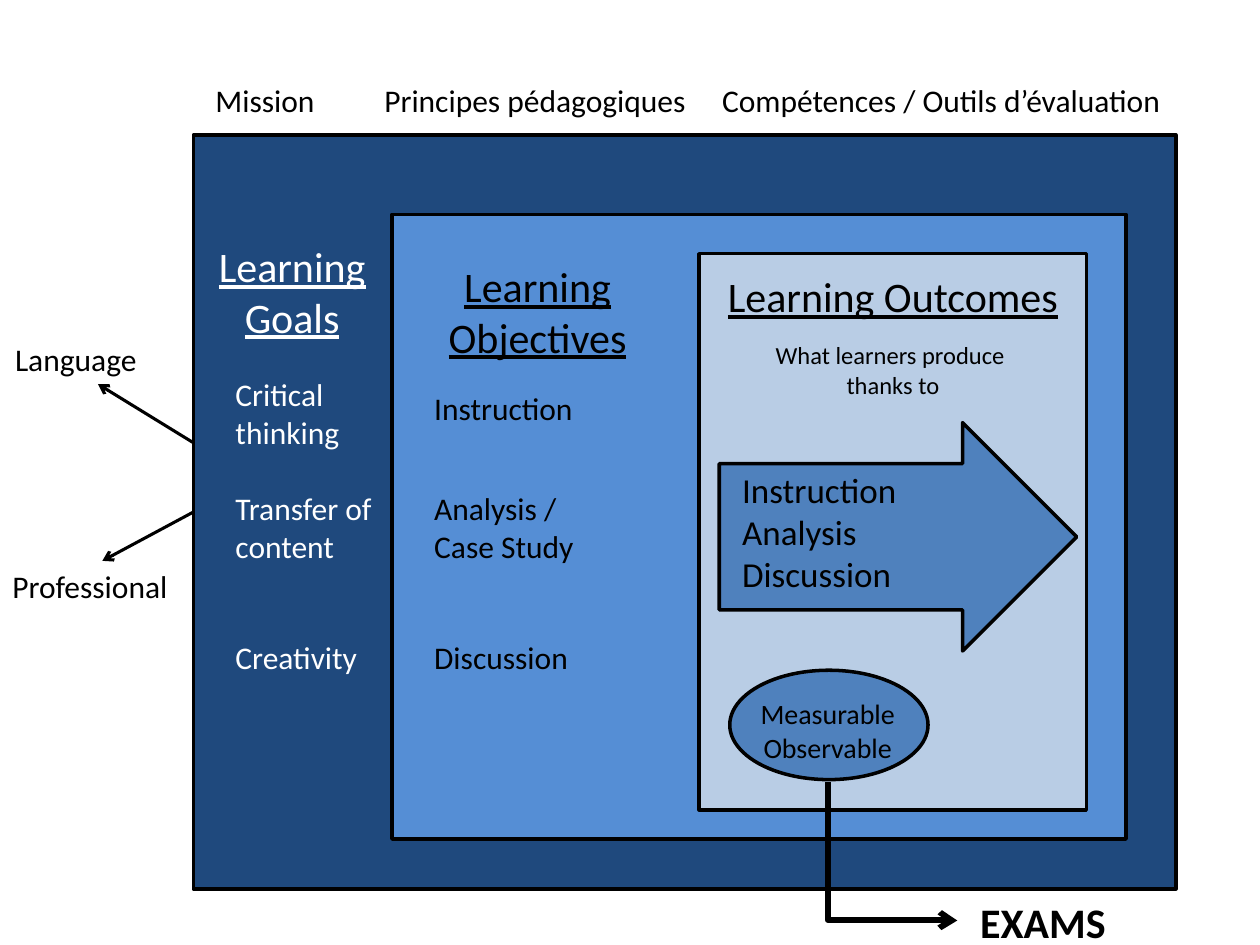
from lxml.etree import SubElement
from pptx import Presentation
from pptx.dml.color import RGBColor
from pptx.enum.shapes import MSO_CONNECTOR, MSO_SHAPE
from pptx.enum.text import MSO_AUTO_SIZE, PP_ALIGN
from pptx.oxml.ns import qn
from pptx.util import Pt

COLORS = {
    "goals": "1F497D",
    "objectives": "558ED5",
    "outcomes": "B9CDE5",
    "accent": "4F81BD",
    "black": "000000",
    "white": "FFFFFF",
}


def rgb(name):
    """Return the named colour."""
    return RGBColor.from_string(COLORS[name])


def add_box(s, kind, fill, left, top, width, height):
    """Add an outlined, filled shape."""
    sp = s.shapes.add_shape(kind, Pt(left), Pt(top), Pt(width), Pt(height))
    sp.shadow.inherit = False
    sp.fill.solid()
    sp.fill.fore_color.rgb = rgb(fill)
    sp.line.color.rgb = rgb("black")
    sp.line.width = Pt(2)
    return sp


def add_text(s, text, left, top, width, height, size=18, color="black",
             centered=False, underline=None, bold=None):
    """Add a text box with one paragraph per line of text."""
    sp = s.shapes.add_textbox(Pt(left), Pt(top), Pt(width), Pt(height))
    tf = sp.text_frame
    tf.word_wrap = True
    tf.auto_size = MSO_AUTO_SIZE.SHAPE_TO_FIT_TEXT
    tf.text = text
    for p in tf.paragraphs:
        p.alignment = PP_ALIGN.CENTER if centered else PP_ALIGN.LEFT
        p.font.name = "Calibri"
        p.font.size = Pt(size)
        p.font.color.rgb = rgb(color)
        p.font.underline = underline
        p.font.bold = bold


def add_heading(s, text, left, top, width, height, color="black"):
    """Add an underlined, centred block heading."""
    add_text(s, text, left, top, width, height, 24, color, True, underline=True)


def add_arrow(s, kind, x1, y1, x2, y2, weight):
    """Add a black connector with an open arrowhead at its end."""
    cxn = s.shapes.add_connector(kind, Pt(x1), Pt(y1), Pt(x2), Pt(y2))
    cxn.line.color.rgb = rgb("black")
    cxn.line.width = Pt(weight)
    SubElement(cxn.line._get_or_add_ln(), qn("a:tailEnd"), type="arrow")
    SubElement(cxn._element.spPr, qn("a:effectLst"))
    return cxn


def add_exam_arrow(s):
    """Add the elbow that drops from the ellipse and turns right to the exams."""
    cxn = add_arrow(s, MSO_CONNECTOR.ELBOW, 549.5, 449.5, 470.5, 523.5, 3.25)
    spPr = cxn._element.spPr
    spPr.find(qn("a:xfrm")).set("rot", "16200000")
    geom = spPr.find(qn("a:prstGeom"))
    avLst = geom.find(qn("a:avLst"))
    if avLst is None:
        avLst = SubElement(geom, qn("a:avLst"))
    SubElement(avLst, qn("a:gd"), name="adj1", fmla="val 99700")


def add_blocks(s):
    """Add the nested blocks and return the outermost one."""
    goals = add_box(s, MSO_SHAPE.RECTANGLE, "goals", 110.5, 77.2, 561.5, 430.8)
    add_box(s, MSO_SHAPE.RECTANGLE, "objectives", 224, 122.5, 419.5, 357)
    add_box(s, MSO_SHAPE.RECTANGLE, "outcomes", 399.5, 145, 221.3, 317.8)
    arrow = add_box(s, MSO_SHAPE.RIGHT_ARROW, "accent", 411, 241.5, 204.3, 130.5)
    arrow.adjustments[0] = 0.64
    return goals


def add_outcomes(s):
    """Add the wording of the outcomes block and its ellipse."""
    add_heading(s, "Learning Outcomes", 405.5, 151, 209.5, 36.5)
    add_text(s, "What learners produce \nthanks to", 405.5, 191, 209.5, 41, 14,
             centered=True)
    add_text(s, "Instruction\nAnalysis\nDiscussion", 417, 264, 130, 80, 20)
    add_box(s, MSO_SHAPE.OVAL, "accent", 417, 383, 113.3, 62.5)
    add_text(s, "Measurable\nObservable", 421, 394.5, 104, 46, 16, centered=True)


def add_columns(s):
    """Add the goals and objectives columns, which share their rows."""
    add_heading(s, "Learning Goals", 116, 134, 102, 65, "white")
    add_heading(s, "Learning Objectives", 229.5, 145.5, 155.5, 65)
    rows = [
        ("Critical thinking", 211, "Instruction", 219),
        ("Transfer of content", 276, "Analysis /\nCase Study", 276),
        ("Creativity", 361, "Discussion", 361),
    ]
    for goal, goal_top, objective, objective_top in rows:
        add_text(s, goal, 127.5, goal_top, 92, 29, color="white")
        add_text(s, objective, 241, objective_top, 148, 29)


def main():
    """Build and save the slide."""
    prs = Presentation()
    prs.slide_width, prs.slide_height = Pt(720), Pt(540)
    s = prs.slides.add_slide(prs.slide_layouts[6])
    goals = add_blocks(s)
    add_outcomes(s)
    add_exam_arrow(s)
    add_text(s, "EXAMS", 553, 508.5, 124.5, 36.5, 24, bold=True)
    add_text(s, "Language", 1.5, 191, 109, 29)
    add_text(s, "Professional", 0, 320.5, 116, 29)
    add_arrow(s, MSO_CONNECTOR.STRAIGHT, 110.5, 253, 56, 219.5, 1.75)
    professional = add_arrow(s, MSO_CONNECTOR.STRAIGHT, 110.5, 292.6, 58.5, 320.5, 1.75)
    professional.begin_connect(goals, 1)
    for text, left, width in [
        ("Mission", 116, 85),
        ("Principes pédagogiques", 212.5, 187),
        ("Compétences / Outils d’évaluation", 405.5, 283.5),
    ]:
        add_text(s, text, left, 43, width, 29)
    add_columns(s)
    prs.save("out.pptx")


if __name__ == "__main__":
    main()
